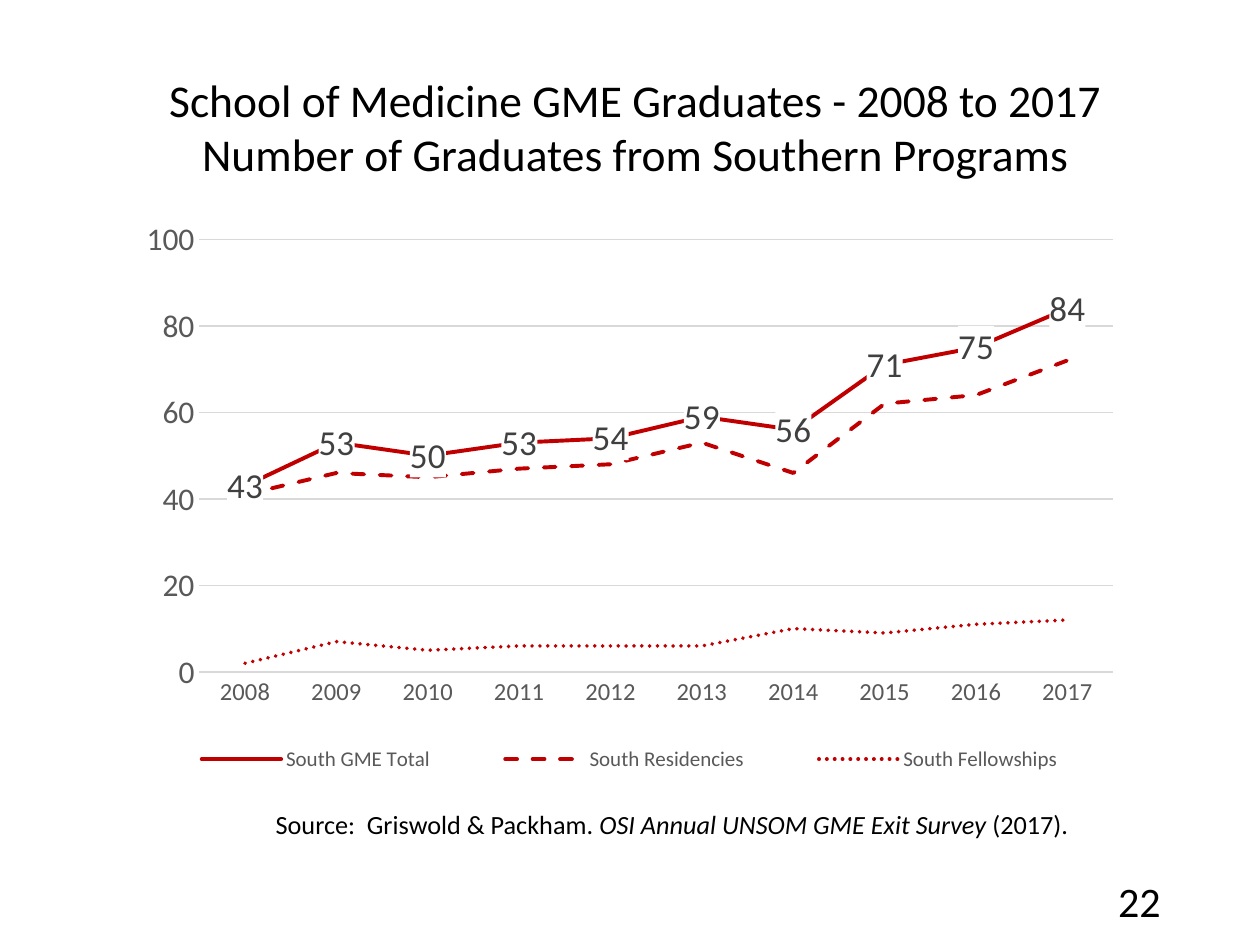
from dataclasses import dataclass
from typing import Optional

from pptx import Presentation
from pptx import util as u
from pptx.chart.data import CategoryChartData
from pptx.dml.color import RGBColor
from pptx.enum import chart as ch, dml, text
from pptx.oxml import parse_xml
from pptx.oxml.ns import nsdecls, qn


@dataclass(frozen=True)
class Theme:
    font: str = "Calibri"
    ink: str = "000000"
    axis_ink: str = "595959"
    label_ink: str = "404040"
    grid: str = "D9D9D9"
    south: str = "C00000"
    paper: str = "FFFFFF"
    title_size: float = 26
    source_size: float = 15
    number_size: float = 24
    year_size: float = 14
    count_size: float = 18
    legend_size: float = 12
    label_size: float = 20
    hairline: float = 0.75
    trend_width: float = 2.25


@dataclass(frozen=True)
class Frame:
    left: float
    top: float
    width: float
    height: float

    def lengths(self) -> list:
        return [u.Pt(v) for v in (self.left, self.top, self.width, self.height)]


@dataclass(frozen=True)
class Run:
    wording: str
    italic: bool = False


@dataclass(frozen=True)
class Caption:
    frame: Frame
    lines: list[list[Run]]
    size: float
    align: text.PP_ALIGN = text.PP_ALIGN.CENTER
    anchor: text.MSO_ANCHOR = text.MSO_ANCHOR.TOP


@dataclass(frozen=True)
class Trend:
    name: str
    counts: list[int]
    dash: Optional[dml.MSO_LINE] = None
    labelled: bool = False


THEME = Theme()
YEARS = [str(year) for year in range(2008, 2018)]
CAPTIONS = [
    Caption(Frame(38.9, 37.4, 648.7, 70.6),
            [[Run("School of Medicine GME Graduates - 2008 to 2017")],
             [Run("Number of Graduates from Southern Programs")]],
            THEME.title_size),
    Caption(Frame(135.4, 458.6, 500.4, 25.2),
            [[Run("Source:  Griswold & Packham. "),
              Run("OSI Annual UNSOM GME Exit Survey ", italic=True),
              Run("(2017). ")]],
            THEME.source_size),
    Caption(Frame(508.3, 500.4, 162, 28.8), [[Run("22")]], THEME.number_size,
            text.PP_ALIGN.RIGHT, text.MSO_ANCHOR.MIDDLE),
]
TRENDS = [
    Trend("South GME Total", [43, 53, 50, 53, 54, 59, 56, 71, 75, 84], labelled=True),
    Trend("South Residencies", [41, 46, 45, 47, 48, 53, 46, 62, 64, 72], dml.MSO_LINE.DASH),
    Trend("South Fellowships", [2, 7, 5, 6, 6, 6, 10, 9, 11, 12], dml.MSO_LINE.ROUND_DOT),
]
CHART_FRAME = Frame(70.6, 118.1, 578.2, 334.1)
PLOT_SHARE = Frame(0.075, 0.056, 0.903, 0.74)
LEGEND_SHARE = Frame(0.01, 0.91, 0.98, 0.07)


def style_font(font, size: float, color: str) -> None:
    font.name = THEME.font
    font.size = u.Pt(size)
    font.color.rgb = RGBColor.from_string(color)


def style_line(line, color: str, width: float) -> None:
    line.color.rgb = RGBColor.from_string(color)
    line.width = u.Pt(width)


def layout_xml(share: Frame, inner: bool = False):
    target = '<c:layoutTarget val="inner"/>' if inner else ""
    return parse_xml(
        f'<c:layout {nsdecls("c")}><c:manualLayout>{target}'
        '<c:xMode val="edge"/><c:yMode val="edge"/>'
        f'<c:x val="{share.left}"/><c:y val="{share.top}"/>'
        f'<c:w val="{share.width}"/><c:h val="{share.height}"/>'
        '</c:manualLayout></c:layout>')


def draw_caption(slide, caption: Caption) -> None:
    frame = slide.shapes.add_textbox(*caption.frame.lengths()).text_frame
    frame.word_wrap = True
    frame.vertical_anchor = caption.anchor
    frame.text = "\n".join("".join(run.wording for run in line) for line in caption.lines)
    for paragraph, line in zip(frame.paragraphs, caption.lines):
        paragraph.alignment = caption.align
        paragraph.text = line[0].wording
        for part in line[1:]:
            paragraph.add_run().text = part.wording
        for run, part in zip(paragraph.runs, line):
            style_font(run.font, caption.size, THEME.ink)
            run.font.italic = part.italic


def label_counts(series) -> None:
    labels = series.data_labels
    labels.show_value = True
    labels.position = ch.XL_LABEL_POSITION.CENTER
    style_font(labels.font, THEME.label_size, THEME.label_ink)
    backing = parse_xml(
        f'<c:spPr {nsdecls("c", "a")}><a:solidFill><a:srgbClr val="{THEME.paper}"/>'
        '</a:solidFill><a:ln><a:noFill/></a:ln></c:spPr>')
    series.data_labels._element.find(qn("c:txPr")).addprevious(backing)


def style_trend(series, trend: Trend) -> None:
    series.smooth = False
    series.marker.style = ch.XL_MARKER_STYLE.NONE
    line = series.format.line
    style_line(line, THEME.south, THEME.trend_width)
    if trend.dash is not None:
        line.dash_style = trend.dash
    series._element.spPr.find(qn("a:ln")).set("cap", "rnd")
    if trend.labelled:
        label_counts(series)


def style_axes(chart) -> None:
    years, counts = chart.category_axis, chart.value_axis
    for axis, size in ((years, THEME.year_size), (counts, THEME.count_size)):
        axis.major_tick_mark = axis.minor_tick_mark = ch.XL_TICK_MARK.NONE
        style_font(axis.tick_labels.font, size, THEME.axis_ink)
    style_line(years.format.line, THEME.grid, THEME.hairline)
    counts.format.line.fill.background()
    counts.minimum_scale, counts.maximum_scale, counts.major_unit = 0, 100, 20
    counts.has_major_gridlines = True
    style_line(counts.major_gridlines.format.line, THEME.grid, THEME.hairline)


def style_legend(chart) -> None:
    chart.has_legend = True
    legend = chart.legend
    legend.position = ch.XL_LEGEND_POSITION.BOTTOM
    legend.include_in_layout = False
    style_font(legend.font, THEME.legend_size, THEME.axis_ink)
    element = legend._element
    for automatic in element.findall(qn("c:layout")):
        element.remove(automatic)
    element.find(qn("c:legendPos")).addnext(layout_xml(LEGEND_SHARE))


def draw_graduates(slide) -> None:
    data = CategoryChartData()
    data.categories = YEARS
    for trend in TRENDS:
        data.add_series(trend.name, trend.counts)
    chart = slide.shapes.add_chart(
        ch.XL_CHART_TYPE.LINE, *CHART_FRAME.lengths(), data).chart
    chart.has_title = False
    style_font(chart.font, 10, THEME.ink)
    chart.plots[0].vary_by_categories = False
    for series, trend in zip(chart.plots[0].series, TRENDS):
        style_trend(series, trend)
    style_axes(chart)
    style_legend(chart)
    plot_area = chart._chartSpace.chart.plotArea
    for automatic in plot_area.findall(qn("c:layout")):
        plot_area.remove(automatic)
    plot_area.insert(0, layout_xml(PLOT_SHARE, inner=True))


def main() -> None:
    deck = Presentation()
    deck.slide_width, deck.slide_height = u.Pt(720), u.Pt(540)
    slide = deck.slides.add_slide(deck.slide_layouts[6])
    for caption in CAPTIONS:
        draw_caption(slide, caption)
    draw_graduates(slide)
    deck.save("out.pptx")


if __name__ == "__main__":
    main()
